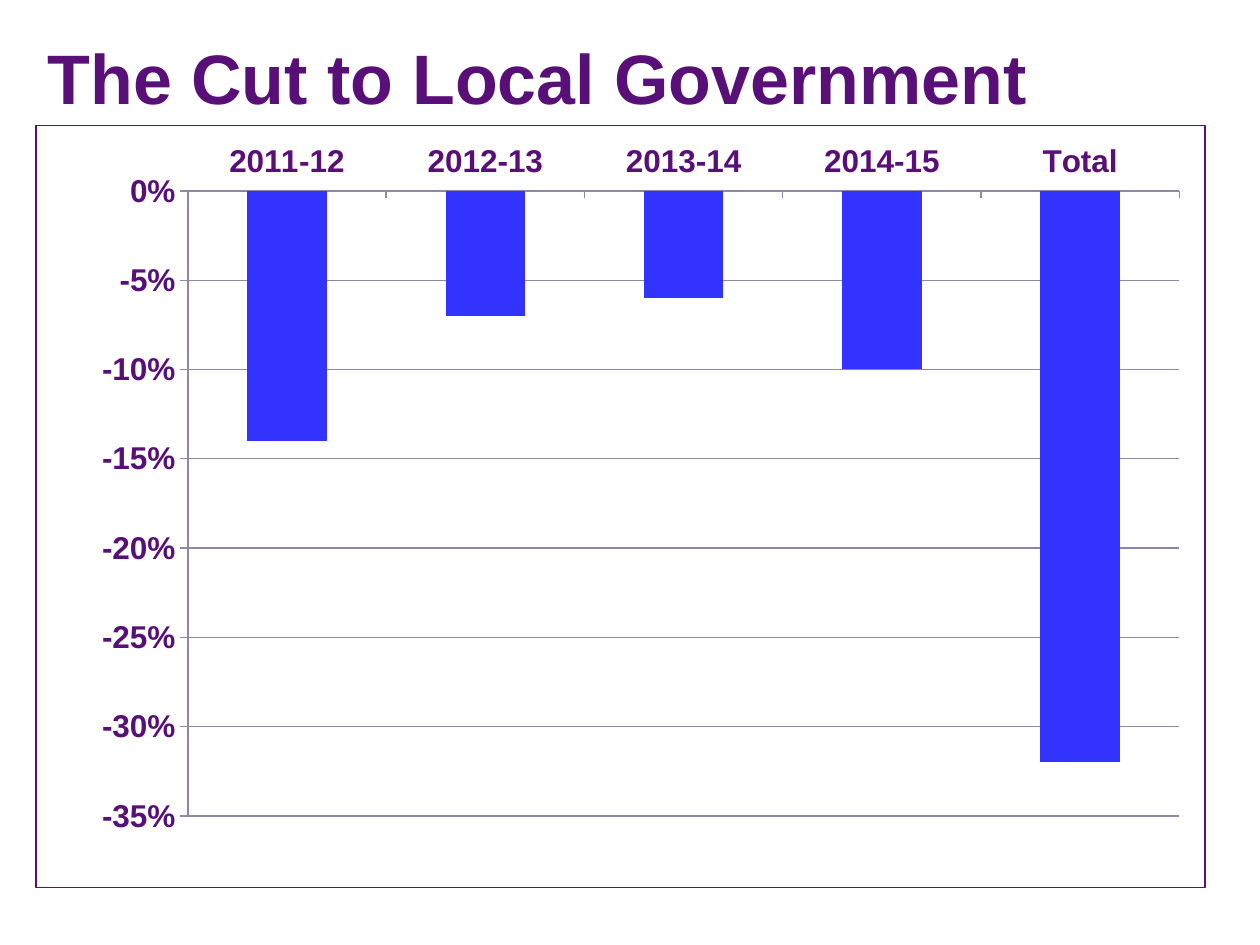
from lxml import etree
from pptx import Presentation
from pptx.chart.data import CategoryChartData
from pptx.dml.color import RGBColor
from pptx.enum.chart import XL_CHART_TYPE as ChartType
from pptx.enum.chart import XL_TICK_LABEL_POSITION as LabelPosition
from pptx.enum.chart import XL_TICK_MARK as TickMark
from pptx.enum.text import MSO_ANCHOR as Anchor
from pptx.oxml import parse_xml
from pptx.oxml.ns import nsdecls, qn
from pptx.util import Inches, Pt

COLORS = {"purple": "590F78", "blue": "3333FF", "axis": "9484A5"}
FONT = "Arial"
CUTS = {
    "2011-12": -0.14,
    "2012-13": -0.07,
    "2013-14": -0.06,
    "2014-15": -0.1,
    "Total": -0.32,
}


def color(name):
    return RGBColor.from_string(COLORS[name])


def style_font(font, size, name):
    font.name = FONT
    font.size = Pt(size)
    font.bold = True
    font.color.rgb = color(name)


def add_text(slide, box, text, *, size, name, anchor=Anchor.MIDDLE):
    frame = slide.shapes.add_textbox(*box).text_frame
    frame.word_wrap = True
    frame.vertical_anchor = anchor
    run = frame.paragraphs[0].add_run()
    run.text = text
    style_font(run.font, size, name)


def set_plot_layout(chart, x, y, w, h):
    plot_area = chart.element.find(".//" + qn("c:plotArea"))
    for old in plot_area.findall(qn("c:layout")):
        plot_area.remove(old)
    layout = etree.Element(qn("c:layout"))
    manual = etree.SubElement(layout, qn("c:manualLayout"))
    settings = {"layoutTarget": "inner", "xMode": "edge", "yMode": "edge",
                "x": x, "y": y, "w": w, "h": h}
    for tag, value in settings.items():
        etree.SubElement(manual, qn("c:" + tag)).set("val", str(value))
    plot_area.insert(0, layout)


def set_chart_border(chart, name, width):
    border = parse_xml(
        f'<c:spPr {nsdecls("c", "a")}><a:noFill/><a:ln w="{Pt(width)}"><a:solidFill>'
        f'<a:srgbClr val="{COLORS[name]}"/></a:solidFill></a:ln></c:spPr>'
    )
    chart.element.find(qn("c:chart")).addnext(border)


def style_line(line, width=0.75):
    line.color.rgb = color("axis")
    line.width = Pt(width)


def add_cuts_chart(slide, box):
    data = CategoryChartData(number_format="0%")
    data.categories = list(CUTS)
    data.add_series("Series 1", list(CUTS.values()))
    chart = slide.shapes.add_chart(ChartType.COLUMN_CLUSTERED, *box, data).chart
    chart.has_legend = False
    chart.has_title = False
    style_font(chart.font, 18, "purple")
    set_chart_border(chart, "purple", 0.75)
    set_plot_layout(chart, 0.13, 0.086, 0.848, 0.82)

    years, percent = chart.category_axis, chart.value_axis
    for axis in (years, percent):
        axis.major_tick_mark = TickMark.OUTSIDE
        axis.minor_tick_mark = TickMark.NONE
        style_line(axis.format.line)
    years.tick_label_position = LabelPosition.HIGH
    percent.minimum_scale = -0.35
    percent.maximum_scale = 0
    percent.major_unit = 0.05
    percent.tick_labels.number_format = "0%"
    percent.tick_labels.number_format_is_linked = False
    percent.has_major_gridlines = True
    style_line(percent.major_gridlines.format.line)

    plot = chart.plots[0]
    plot.gap_width = 150
    plot.vary_by_categories = False
    cuts = plot.series[0]
    cuts.invert_if_negative = False
    cuts.format.fill.solid()
    cuts.format.fill.fore_color.rgb = color("blue")


def main():
    deck = Presentation()
    deck.slide_width, deck.slide_height = Inches(10), Inches(7.5)
    slide = deck.slides.add_slide(deck.slide_layouts[6])
    left, top, width = Inches(0.28), Inches(0.22), Inches(9.29)
    title_height = Inches(0.77)
    add_cuts_chart(slide, (left, top + title_height, width, Inches(6.06)))
    add_text(slide, (left, top, width, title_height),
             "The Cut to Local Government", size=40, name="purple")
    deck.save("out.pptx")


if __name__ == "__main__":
    main()
